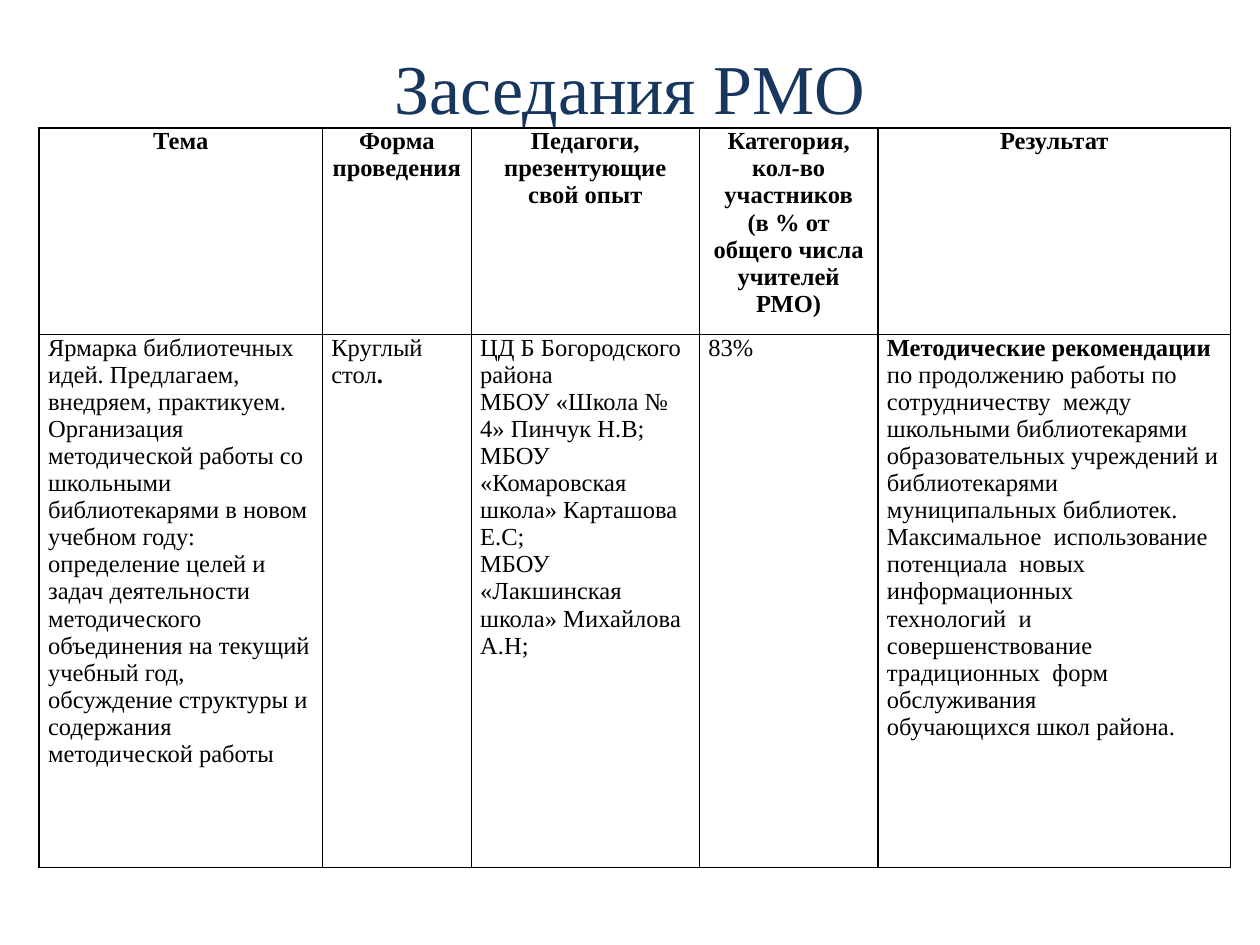
"""Build the slide listing the meetings of the district teaching association."""
from dataclasses import dataclass

from lxml.etree import SubElement
from pptx import Presentation
from pptx.dml.color import RGBColor
from pptx.enum.text import MSO_ANCHOR, PP_ALIGN
from pptx.oxml.ns import qn
from pptx.slide import Slide
from pptx.table import _Cell
from pptx.text.text import _Paragraph
from pptx.util import Cm, Pt

NAVY = RGBColor(0x17, 0x37, 0x5E)
BLACK = RGBColor(0, 0, 0)
FONT = "Times New Roman"
ROW_HEIGHTS = (4.16, 10.75)


@dataclass(frozen=True)
class Span:
    text: str
    bold: bool = False


@dataclass(frozen=True)
class Column:
    width: float
    heading: tuple[str, ...]
    body: tuple[tuple[Span, ...], ...]
    body_align: PP_ALIGN = PP_ALIGN.LEFT


COLUMNS = (
    Column(5.71, ("Тема",), (
        (Span("Ярмарка библиотечных идей. Предлагаем, внедряем, практикуем."),),
        (Span("Организация методической работы со школьными библиотекарями в новом "
              "учебном году: определение целей и задач деятельности методического "
              "объединения на текущий учебный год, обсуждение структуры и содержания "
              "методической работы"),),
    )),
    Column(3.0, ("Форма проведения",), (
        (Span("Круглый стол"), Span(".", True)),
    ), PP_ALIGN.JUSTIFY),
    Column(4.6, ("Педагоги, презентующие свой опыт",), (
        (Span("ЦД Б Богородского района"),),
        (Span("МБОУ «Школа № 4» Пинчук Н.В;"),),
        (Span("МБОУ «Комаровская школа» Карташова Е.С;"),),
        (Span("МБОУ «Лакшинская школа» Михайлова А.Н;"),),
    )),
    Column(3.6, ("Категория, кол-во участников", "(в % от общего числа учителей РМО)"), (
        (Span("83%"),),
    ), PP_ALIGN.JUSTIFY),
    Column(7.11, ("Результат",), (
        (Span("Методические рекомендации ", True),
         Span("по продолжению работы по сотрудничеству  между школьными библиотекарями "
              "образовательных учреждений и библиотекарями  муниципальных библиотек.")),
        (Span("Максимальное  использование  потенциала  новых  информационных"),),
        (Span("технологий  и  совершенствование  традиционных  форм  обслуживания"),),
        (Span("обучающихся школ района."),),
    )),
)


def write_paragraph(para: _Paragraph, spans: tuple[Span, ...], align: PP_ALIGN,
                    size: float, color: RGBColor) -> None:
    """Write the spans, setting bold on the paragraph where all agree."""
    para.alignment = align
    para.font.name, para.font.size = FONT, Pt(size)
    para.font.color.rgb = color
    para.font.bold = all(span.bold for span in spans)
    mixed = len({span.bold for span in spans}) > 1
    for span in spans:
        run = para.add_run()
        run.text = span.text
        if mixed:
            run.font.bold = span.bold


def draw_borders(cell: _Cell) -> None:
    """Give the cell a thin black line on every side."""
    properties = cell._tc.get_or_add_tcPr()
    for index, side in enumerate(("a:lnL", "a:lnR", "a:lnT", "a:lnB")):
        line = properties.makeelement(qn(side), {"w": str(Pt(1))})
        properties.insert(index, line)
        fill = SubElement(line, qn("a:solidFill"))
        SubElement(fill, qn("a:srgbClr"), val=str(BLACK))


def fill_cell(cell: _Cell, paragraphs: tuple[tuple[Span, ...], ...],
              align: PP_ALIGN) -> None:
    """Write and format one table cell."""
    cell.margin_left = cell.margin_right = Cm(0.18)
    cell.margin_top = cell.margin_bottom = Cm(0)
    cell.fill.background()
    draw_borders(cell)
    frame = cell.text_frame
    for index, spans in enumerate(paragraphs):
        para = frame.add_paragraph() if index else frame.paragraphs[0]
        write_paragraph(para, spans, align, 14, BLACK)


def draw_title(page: Slide, text: str) -> None:
    """Draw the centred title."""
    box = page.shapes.add_textbox(Cm(1.27), Cm(0.76), Cm(22.86), Cm(1.96))
    frame = box.text_frame
    frame.word_wrap = True
    frame.vertical_anchor = MSO_ANCHOR.MIDDLE
    write_paragraph(frame.paragraphs[0], (Span(text),), PP_ALIGN.CENTER, 40, NAVY)


def draw_table(page: Slide) -> None:
    """Draw the table of meetings."""
    width = sum(column.width for column in COLUMNS)
    table = page.shapes.add_table(len(ROW_HEIGHTS), len(COLUMNS), Cm(0.79), Cm(2.58),
                                  Cm(width), Cm(sum(ROW_HEIGHTS))).table
    table.first_row = table.horz_banding = False
    for row, height in zip(table.rows, ROW_HEIGHTS):
        row.height = Cm(height)
    for index, column in enumerate(COLUMNS):
        table.columns[index].width = Cm(column.width)
        heading = tuple((Span(text, True),) for text in column.heading)
        fill_cell(table.cell(0, index), heading, PP_ALIGN.CENTER)
        fill_cell(table.cell(1, index), column.body, column.body_align)


def main() -> None:
    """Create and save the deck."""
    deck = Presentation()
    deck.slide_width, deck.slide_height = Cm(25.4), Cm(19.05)
    page = deck.slides.add_slide(deck.slide_layouts[6])
    draw_title(page, "Заседания РМО")
    draw_table(page)
    deck.save("out.pptx")


if __name__ == "__main__":
    main()
